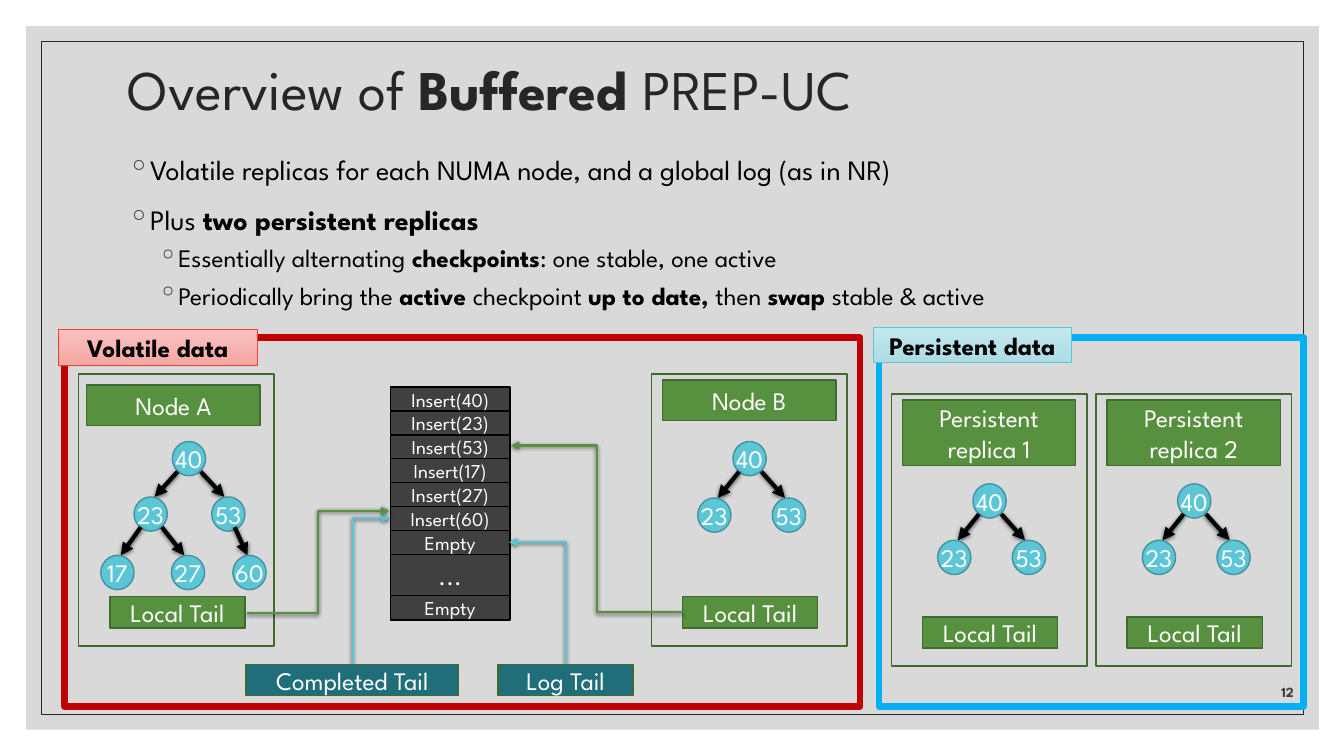
from lxml import etree
from pptx import Presentation
from pptx import util as u
from pptx.dml.color import RGBColor
from pptx.enum import shapes, text
from pptx.oxml import parse_xml
from pptx.oxml.ns import nsdecls, qn

FONT = "League Spartan"
GREEN, DARK_GREEN = "57903F", "406B2F"
CYAN, DARK_CYAN, TEAL = "5CC6D6", "44929E", "1F6E7A"
NODE_WIDTH, NODE_HEIGHT = 0.33, 0.34
PANEL_WIDTH, PANEL_HEIGHT = 1.94, 2.7

# Each node: label, offset from its parent, index of its parent
SMALL_TREE = [("40", 0, 0, None), ("23", -0.35, 0.56, 0), ("53", 0.39, 0.56, 0)]
FULL_TREE = [("40", 0, 0, None), ("23", -0.38, 0.55, 0), ("53", 0.39, 0.55, 0),
             ("17", -0.33, 0.58, 1), ("27", 0.37, 0.58, 1), ("60", 0.21, 0.58, 2)]

BULLETS = [
    (0, ["Volatile replicas for each NUMA node, and a global log (as in NR)"]),
    (0, ["Plus ", "two persistent replicas"]),
    (1, ["Essentially alternating ", "checkpoints", ": one stable, one active"]),
    (1, ["Periodically bring the ", "active ", "checkpoint ", "up to date, ", "then ",
         "swap ", "stable & active"]),
]


def color(value):
    return RGBColor.from_string(value)


def inches(*lengths):
    return [u.Inches(length) for length in lengths]


def format_runs(paragraph, size, font_color, bold=False):
    for run in paragraph.runs:
        run.font.name = FONT
        run.font.size = u.Pt(size)
        run.font.color.rgb = color(font_color)
        if bold:
            run.font.bold = True


def add_alternating_runs(paragraph, parts):
    """Add the parts as runs, with every second one bold."""
    for index, part in enumerate(parts):
        run = paragraph.add_run()
        run.text = part
        run.font.bold = index % 2 == 1


def add_box(slide, box, fill=None, line=None, width=1.0, label="", size=18,
            font_color="FFFFFF", bold=False, kind=shapes.MSO_SHAPE.RECTANGLE):
    """Draw a preset shape; a pair of fills makes a vertical gradient."""
    shape = slide.shapes.add_shape(kind, *inches(*box))
    shape.shadow.inherit = False
    if fill is None:
        shape.fill.background()
    elif isinstance(fill, tuple):
        shape.fill.gradient()
        shape.fill.gradient_angle = 270
        for stop, stop_color in zip(shape.fill.gradient_stops, fill):
            stop.color.rgb = color(stop_color)
    else:
        shape.fill.solid()
        shape.fill.fore_color.rgb = color(fill)
    if line:
        shape.line.color.rgb = color(line)
        shape.line.width = u.Pt(width)
    else:
        shape.line.fill.background()
    if label:
        frame = shape.text_frame
        frame.text = label
        frame.vertical_anchor = text.MSO_ANCHOR.MIDDLE
        frame.word_wrap = kind != shapes.MSO_SHAPE.OVAL
        frame.paragraphs[0].alignment = text.PP_ALIGN.CENTER
        format_runs(frame.paragraphs[0], size, font_color, bold)
    return shape


def add_arrow(slide, start, end, line, width, kind=shapes.MSO_CONNECTOR.STRAIGHT):
    connector = slide.shapes.add_connector(kind, *inches(*start, *end))
    connector.line.color.rgb = color(line)
    connector.line.width = u.Pt(width)
    properties = connector.element.spPr
    etree.SubElement(properties.find(qn("a:ln")), qn("a:tailEnd"), type="triangle")
    properties.append(parse_xml(
        f'<a:effectLst {nsdecls("a")}><a:outerShdw blurRad="38100" dist="12700" '
        'dir="5400000" rotWithShape="0"><a:srgbClr val="000000"><a:alpha val="63000"/>'
        '</a:srgbClr></a:outerShdw></a:effectLst>'))
    return connector


def add_corner_arrow(slide, start, end):
    """Go straight up from start, then sideways to end."""
    middle_x, middle_y = (start[0] + end[0]) / 2, (start[1] + end[1]) / 2
    half_rise, half_run = (start[1] - end[1]) / 2, abs(end[0] - start[0]) / 2
    side = 1 if end[0] > start[0] else -1
    arrow = add_arrow(slide, (middle_x + side * half_rise, middle_y + half_run),
                      (middle_x - side * half_rise, middle_y - half_run),
                      CYAN, 1.5, shapes.MSO_CONNECTOR.ELBOW)
    properties = arrow.element.spPr
    properties.find(qn("a:prstGeom")).set("prst", "bentConnector2")
    properties.find(qn("a:xfrm")).set("rot", "5400000" if side > 0 else "16200000")


def add_tree(slide, left, top, nodes):
    places = []
    for label, dx, dy, parent in nodes:
        x, y = left, top
        if parent is not None:
            parent_x, parent_y = places[parent]
            x, y = parent_x + dx, parent_y + dy
            center = parent_x + NODE_WIDTH / 2
            add_arrow(slide, (center + 0.3 * dx, parent_y + 0.3),
                      (center + 0.9 * dx, y), "000304", 3)
        places.append((x, y))
        add_box(slide, (x, y, NODE_WIDTH, NODE_HEIGHT), CYAN, DARK_CYAN, label=label,
                kind=shapes.MSO_SHAPE.OVAL)


def add_replica(slide, left, top, name, header, root, nodes):
    """Draw one replica panel; header is (dx, dy, height), root is (dx, dy)."""
    add_box(slide, (left, top, PANEL_WIDTH, PANEL_HEIGHT), line=DARK_GREEN)
    add_box(slide, (left + header[0], top + header[1], 1.72, header[2]),
            GREEN, DARK_GREEN, label=name)
    add_tree(slide, left + root[0], top + root[1], nodes)
    add_box(slide, (left + 0.31, top + 2.21, 1.34, 0.31), GREEN, DARK_GREEN,
            label="Local Tail")


def add_log(slide, left, top):
    entries = [f"Insert({key})" for key in (40, 23, 53, 17, 27, 60)] + ["Empty"]
    pitch = 1.66 / len(entries)
    rows = [(index * pitch, 0.24, entry, 14) for index, entry in enumerate(entries)]
    rows += [(1.66, 0.41, "...", 18), (2.07, 0.24, "Empty", 14)]
    for offset, height, entry, size in rows:
        add_box(slide, (left, top + offset, 1.19, height), "404040", "000000",
                label=entry, size=size)


def add_zone(slide, box, line, badge_top, badge_fill, badge_line, label):
    add_box(slide, box, line=line, width=4.5)
    add_box(slide, (box[0] - 0.06, badge_top, 1.97, 0.35), badge_fill, badge_line, 0.5,
            label, font_color="000000", bold=True)


def add_text(slide, box, anchor):
    frame = slide.shapes.add_textbox(*inches(*box)).text_frame
    frame.word_wrap = True
    frame.vertical_anchor = anchor
    return frame


def add_heading(slide, box):
    paragraph = add_text(slide, box, text.MSO_ANCHOR.MIDDLE).paragraphs[0]
    paragraph.line_spacing = 0.9
    add_alternating_runs(paragraph, ["Overview of ", "Buffered ", "PREP-UC"])
    format_runs(paragraph, 40, "262626")


def add_bullets(slide, box):
    frame = add_text(slide, box, text.MSO_ANCHOR.TOP)
    for index, (level, parts) in enumerate(BULLETS):
        paragraph = frame.add_paragraph() if index else frame.paragraphs[0]
        paragraph.level = level
        paragraph.line_spacing = (1.1, 1.0)[level]
        paragraph.space_before = u.Pt((9, 5)[level])
        add_alternating_runs(paragraph, parts)
        format_runs(paragraph, (20, 18)[level], "000000")
        properties = paragraph._p.get_or_add_pPr()
        properties.set("marL", str(u.Inches((0.2, 0.5)[level])))
        properties.set("indent", str(u.Inches(-0.2)))
        bullet_color = etree.SubElement(properties, qn("a:buClr"))
        etree.SubElement(bullet_color, qn("a:srgbClr"), val="262626")
        etree.SubElement(properties, qn("a:buChar"), char="◦")


def add_page_number(slide, box):
    frame = add_text(slide, box, text.MSO_ANCHOR.BOTTOM)
    frame.text = "12"
    frame.paragraphs[0].alignment = text.PP_ALIGN.RIGHT
    format_runs(frame.paragraphs[0], 10, "404040", bold=True)


def main():
    presentation = Presentation()
    presentation.slide_width, presentation.slide_height = inches(13.33, 7.5)
    slide = presentation.slides.add_slide(presentation.slide_layouts[6])
    add_box(slide, (0.26, 0.26, 12.82, 6.98), "D9D9D9")
    add_box(slide, (0.41, 0.41, 12.52, 6.68), line="262626", width=0.5)
    add_heading(slide, (1.17, 0.49, 11, 0.86))
    add_bullets(slide, (1.17, 1.43, 11, 2.12))

    add_replica(slide, 0.78, 3.71, "Node A", (0.08, 0.11, 0.4), (0.93, 0.67), FULL_TREE)
    add_replica(slide, 6.46, 3.71, "Node B", (0.11, 0.06, 0.4), (0.81, 0.67), SMALL_TREE)
    for number, left in enumerate((8.84, 10.87), 1):
        add_replica(slide, left, 3.91, f"Persistent replica {number}",
                    (0.11, 0.06, 0.65), (0.81, 0.89), SMALL_TREE)
    add_log(slide, 3.87, 3.84)

    add_corner_arrow(slide, (3.5, 6.59), (3.87, 5.14))
    add_corner_arrow(slide, (5.61, 6.59), (5.05, 5.38))
    for start, end in (((6.77, 6.07), (5.07, 4.42)), ((2.45, 6.08), (3.86, 5.07))):
        add_arrow(slide, start, end, GREEN, 1.5, shapes.MSO_CONNECTOR.ELBOW)
    for left, width, label in ((2.44, 2.11, "Completed Tail"), (4.94, 1.34, "Log Tail")):
        add_box(slide, (left, 6.59, width, 0.31), TEAL, DARK_GREEN, label=label)

    add_zone(slide, (0.64, 3.35, 7.89, 3.66), "C00000", 3.27, ("FAC1BF", "F5A7A4"),
             "F03F2B", "Volatile data")
    add_zone(slide, (8.72, 3.35, 4.21, 3.66), "00B0F0", 3.25, ("C4E7EE", "ADDCE5"),
             CYAN, "Persistent data")
    add_page_number(slide, (12.01, 6.6, 0.92, 0.4))
    presentation.save("out.pptx")


if __name__ == "__main__":
    main()
